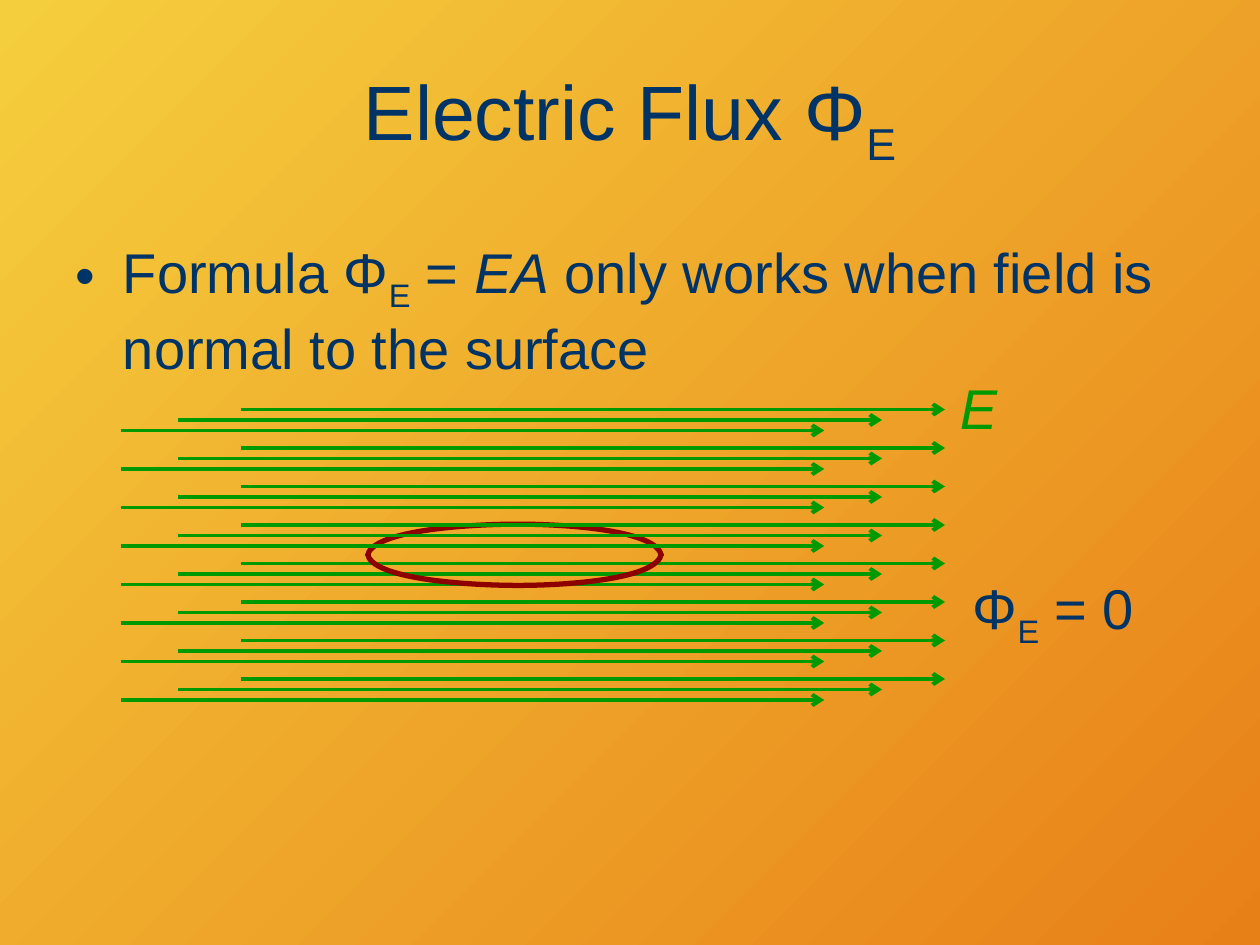
from dataclasses import dataclass

from lxml import etree
from pptx import Presentation
from pptx.dml.color import RGBColor
from pptx.enum.text import MSO_ANCHOR, MSO_AUTO_SIZE, PP_ALIGN
from pptx.oxml.ns import qn
from pptx.util import Pt

CENTER, LEFT = PP_ALIGN.CENTER, PP_ALIGN.LEFT
MIDDLE, TOP = MSO_ANCHOR.MIDDLE, MSO_ANCHOR.TOP
NO_AUTOFIT = MSO_AUTO_SIZE.NONE

NAVY = RGBColor(0x00, 0x33, 0x66)
GREEN = RGBColor(0x00, 0x99, 0x00)
DARK_RED = RGBColor(0x8E, 0x00, 0x00)
YELLOW = RGBColor(0xF5, 0xCE, 0x3D)
ORANGE = RGBColor(0xE8, 0x80, 0x18)

ARROW_LENGTH = 402
ROW_GAP = 22
ROWS_PER_HALF = 4
LOOP_CENTER_Y = 317


@dataclass(frozen=True)
class Run:
    text: str
    italic: bool = False
    subscript: bool = False


@dataclass(frozen=True)
class FieldLayer:
    left: float
    top: float


FIELD_LAYERS = [FieldLayer(69, 246), FieldLayer(102, 240), FieldLayer(138, 234)]
UPPER_ARC = [(378, 1), (376.5, -14), (324, -17.5), (296, -17.5),
             (268, -17.5), (211, -14), (210, 1)]


def place(shape, left: float, top: float, width: float, height: float):
    shape.left, shape.top = Pt(left), Pt(top)
    shape.width, shape.height = Pt(width), Pt(height)
    return shape


def write(shape, runs: list[Run], *, size: float = 32, color: RGBColor = NAVY,
          align=LEFT, anchor=TOP, space_before: float = 6.4) -> None:
    frame = shape.text_frame
    frame.word_wrap = True
    frame.auto_size = NO_AUTOFIT
    frame.vertical_anchor = anchor
    paragraph = frame.paragraphs[0]
    paragraph.alignment = align
    paragraph.space_before = Pt(space_before)
    for part in runs:
        run = paragraph.add_run()
        run.text = part.text
        run.font.name = "Arial"
        run.font.size = Pt(size)
        run.font.color.rgb = color
        run.font.italic = part.italic
        if part.subscript:
            run._r.get_or_add_rPr().set("baseline", "-25000")


def draw_field_arrow(group, left: float, y: float) -> None:
    arrow = group.shapes.add_connector(1, Pt(left), Pt(y), Pt(left + ARROW_LENGTH), Pt(y))
    arrow.line.color.rgb = GREEN
    arrow.line.width = Pt(2.25)
    etree.SubElement(arrow.line._get_or_add_ln(), qn("a:tailEnd"), type="arrow")
    etree.SubElement(arrow._element.spPr, qn("a:effectLst"))


def draw_field_half(slide, first_row: int) -> None:
    group = slide.shapes.add_group_shape()
    for layer in FIELD_LAYERS:
        for row in range(first_row, first_row + ROWS_PER_HALF):
            draw_field_arrow(group, layer.left, layer.top + row * ROW_GAP)


def draw_loop_arc(group, direction: int) -> None:
    points = [(Pt(x), Pt(LOOP_CENTER_Y + direction * dy)) for x, dy in UPPER_ARC]
    builder = group.shapes.build_freeform(*points[0])
    builder.add_line_segments(points[1:], close=False)
    arc = builder.convert_to_shape()
    outline = arc._element.spPr.find(".//" + qn("a:path"))
    segments = outline.findall(qn("a:lnTo"))
    for start in range(0, len(segments), 3):
        curve = etree.SubElement(outline, qn("a:cubicBezTo"))
        for segment in segments[start:start + 3]:
            curve.append(segment[0])
            outline.remove(segment)
    arc.shadow.inherit = False
    arc.fill.background()
    arc.line.color.rgb = DARK_RED
    arc.line.width = Pt(3)


def main() -> None:
    deck = Presentation()
    deck.slide_width, deck.slide_height = Pt(720), Pt(540)
    slide = deck.slides.add_slide(deck.slide_layouts[1])

    backdrop = slide.background.fill
    backdrop.gradient()
    backdrop.gradient_angle = 315
    for stop, color in zip(backdrop.gradient_stops, (YELLOW, ORANGE)):
        stop.color.rgb = color

    phi_subscript = Run("E", subscript=True)
    write(place(slide.shapes.title, 36, 21.6, 648, 90),
          [Run("Electric Flux Φ"), phi_subscript],
          size=44, align=CENTER, anchor=MIDDLE, space_before=0)
    write(place(slide.placeholders[1], 36, 132, 648, 96),
          [Run("Formula Φ"), phi_subscript, Run(" = "), Run("EA", italic=True),
           Run(" only works when field is normal to the surface")])

    draw_field_half(slide, ROWS_PER_HALF)

    flux_value = slide.shapes.add_textbox(Pt(540), Pt(324), Pt(150), Pt(57.6))
    write(flux_value, [Run(" Φ"), phi_subscript, Run(" = 0")])
    field_label = slide.shapes.add_textbox(Pt(541.5), Pt(210), Pt(41), Pt(48))
    write(field_label, [Run("E", italic=True)], color=GREEN)

    loop = slide.shapes.add_group_shape()
    for direction in (1, -1):
        draw_loop_arc(loop, direction)

    draw_field_half(slide, 0)
    deck.save("out.pptx")


if __name__ == "__main__":
    main()
